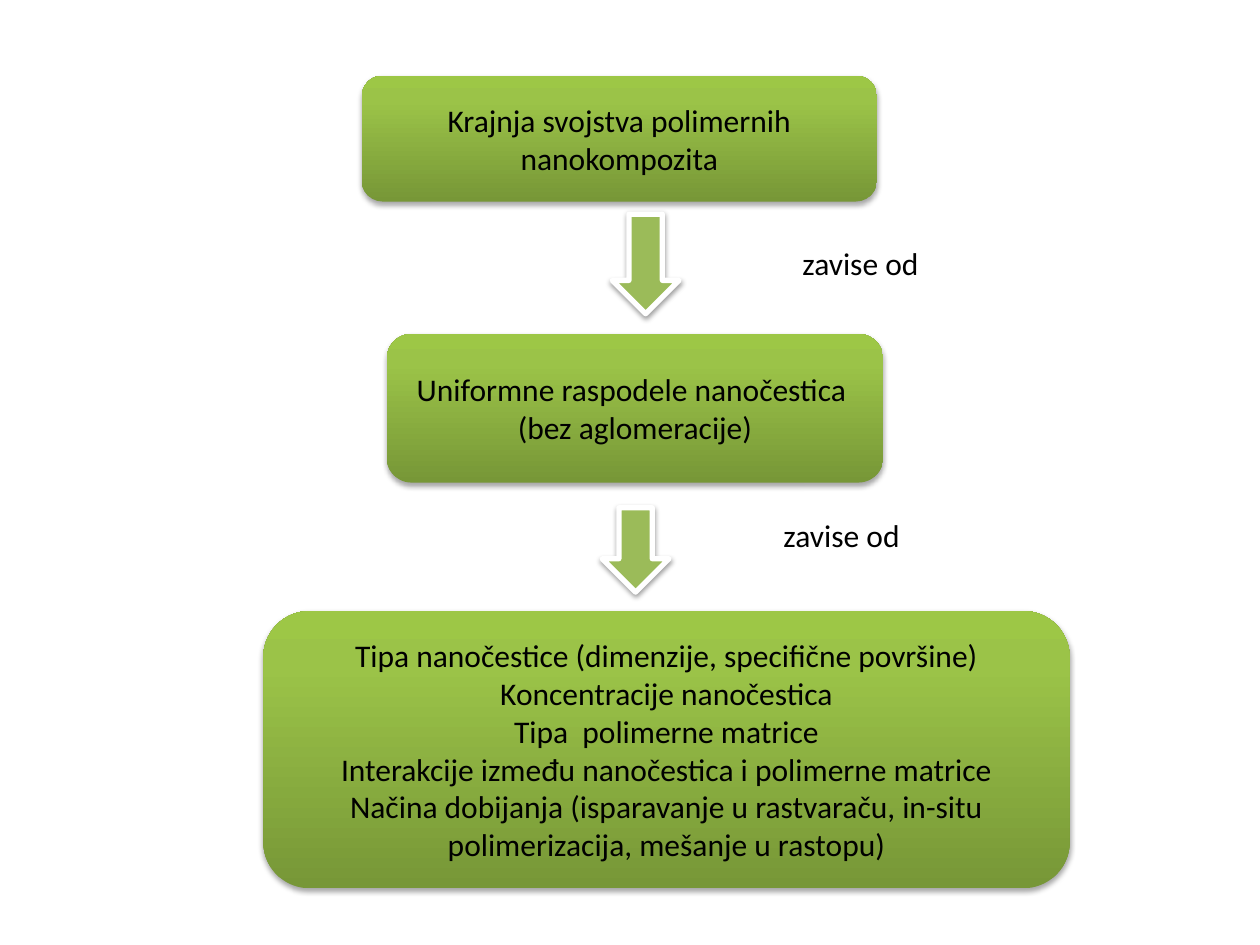
from dataclasses import dataclass

from lxml.etree import SubElement
from pptx import Presentation
from pptx.dml.color import RGBColor
from pptx.enum.shapes import MSO_SHAPE
from pptx.enum.text import MSO_ANCHOR, PP_ALIGN
from pptx.oxml import parse_xml
from pptx.oxml.ns import nsdecls, qn
from pptx.util import Inches, Pt


@dataclass(frozen=True)
class Theme:
    """Colours, font and sizes of the slide."""
    font: str = "Calibri"
    size: int = 18
    ink: str = "000000"
    leaf: str = "9BBB59"
    edge: str = "FFFFFF"
    shade: str = "000000"
    ramp: tuple = ((0, "779737"), (80, "9BC348"), (100, "9DC746"))


THEME = Theme()

BOXES = (
    ((2.87, 0.6, 4.09, 1), ("Krajnja svojstva polimernih nanokompozita",)),
    ((3.07, 2.65, 3.94, 1.18),
     ("Uniformne raspodele nanočestica  (bez aglomeracije)",)),
    ((2.09, 4.85, 6.4, 2.2), (
        "Tipa nanočestice (dimenzije, specifične površine)",
        "Koncentracije nanočestica",
        "Tipa  polimerne matrice",
        "Interakcije između nanočestica i polimerne matrice",
        "Načina dobijanja (isparavanje u rastvaraču, in-situ "
        "polimerizacija, mešanje u rastopu)",
    )),
)
LINKS = (
    ((4.86, 1.7, 0.53, 0.79), (6.27, 1.89, 2.36, 0.4)),
    ((4.78, 4.03, 0.53, 0.67), (6.12, 4.05, 2.36, 0.4)),
)


def place(box):
    """Turn a box in inches into lengths."""
    return [Inches(n) for n in box]


def write(frame, lines, align):
    """Write each line as a paragraph with one run."""
    frame.word_wrap = True
    for i, line in enumerate(lines):
        para = frame.paragraphs[0] if i == 0 else frame.add_paragraph()
        para.alignment = align
        run = para.add_run()
        run.text = line
        run.font.name = THEME.font
        run.font.size = Pt(THEME.size)
        run.font.color.rgb = RGBColor.from_string(THEME.ink)


def shadow(shape, drop, alpha):
    """Give the shape a soft shadow straight below it."""
    shape.shadow.inherit = False
    effect = shape._element.spPr.find(qn("a:effectLst"))
    outer = SubElement(effect, qn("a:outerShdw"), blurRad=str(Pt(3.1)),
                       dist=str(Pt(drop)), dir="5400000", rotWithShape="0")
    color = SubElement(outer, qn("a:srgbClr"), val=THEME.shade)
    SubElement(color, qn("a:alpha"), val=str(alpha * 1000))


def ramp(shape):
    """Fill the shape with the theme's upward gradient."""
    stops = "".join(
        f'<a:gs pos="{pos * 1000}"><a:srgbClr val="{color}"/></a:gs>'
        for pos, color in THEME.ramp)
    fill = parse_xml(
        f'<a:gradFill {nsdecls("a")} rotWithShape="1"><a:gsLst>{stops}'
        '</a:gsLst><a:lin ang="16200000" scaled="0"/></a:gradFill>')
    shape._element.spPr.find(qn("a:prstGeom")).addnext(fill)


def add_box(slide, box, lines):
    """Place a rounded green box with centred lines."""
    shape = slide.shapes.add_shape(MSO_SHAPE.ROUNDED_RECTANGLE, *place(box))
    ramp(shape)
    shape.line.fill.background()
    shadow(shape, 1.8, 35)
    shape.text_frame.vertical_anchor = MSO_ANCHOR.MIDDLE
    write(shape.text_frame, lines, PP_ALIGN.CENTER)


def add_link(slide, box, label):
    """Place a down arrow and the label beside it."""
    arrow = slide.shapes.add_shape(MSO_SHAPE.DOWN_ARROW, *place(box))
    arrow.fill.solid()
    arrow.fill.fore_color.rgb = RGBColor.from_string(THEME.leaf)
    arrow.line.color.rgb = RGBColor.from_string(THEME.edge)
    arrow.line.width = Pt(3)
    shadow(arrow, 1.6, 38)
    text = slide.shapes.add_textbox(*place(label))
    write(text.text_frame, ("zavise od",), PP_ALIGN.LEFT)


def main():
    """Build and save the slide."""
    deck = Presentation()
    deck.slide_width, deck.slide_height = Inches(10), Inches(7.5)
    slide = deck.slides.add_slide(deck.slide_layouts[6])
    for box, lines in BOXES:
        add_box(slide, box, lines)
    for box, label in LINKS:
        add_link(slide, box, label)
    deck.save("out.pptx")


if __name__ == "__main__":
    main()
